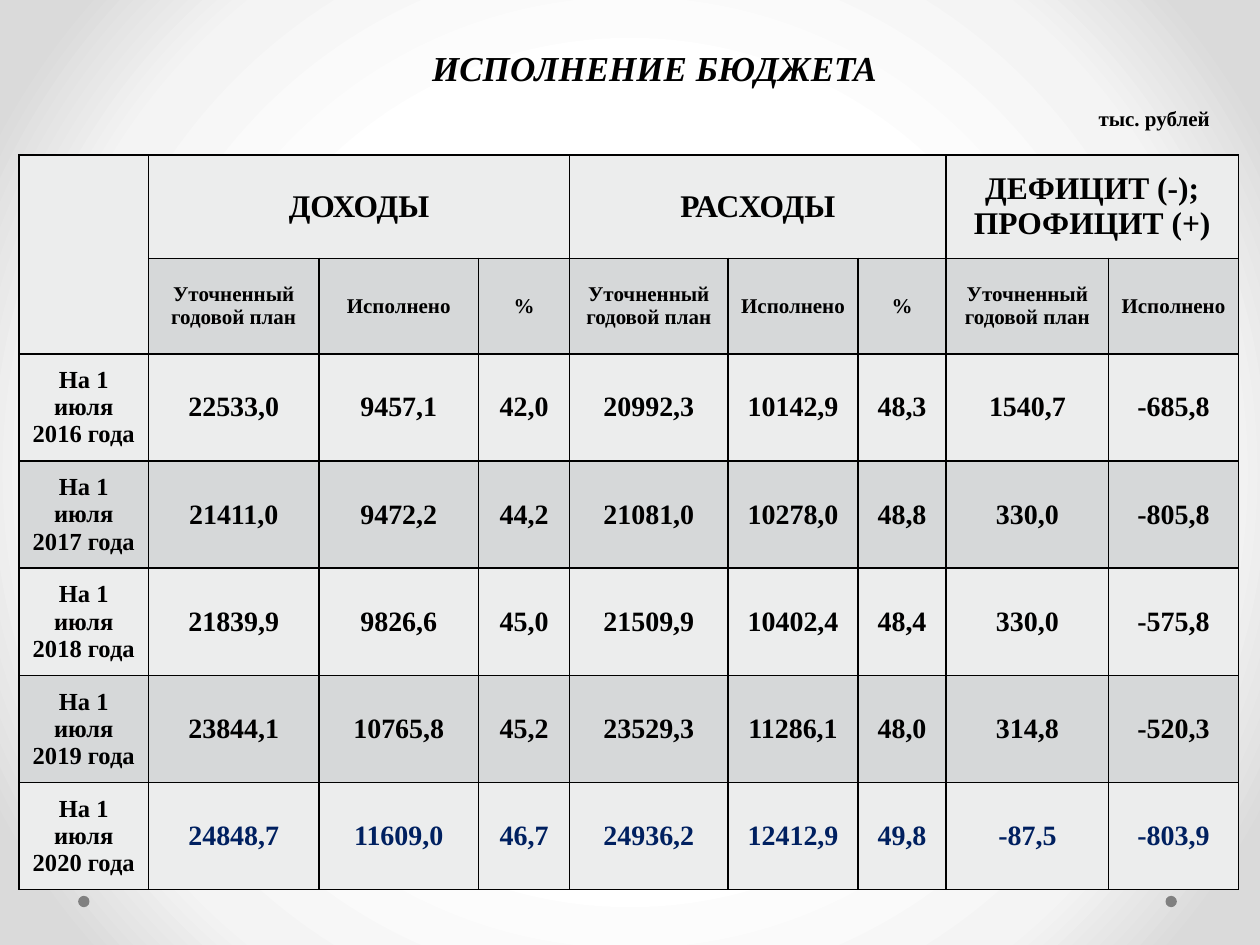
from pptx import Presentation
from pptx.dml.color import RGBColor
from pptx.enum.shapes import MSO_SHAPE
from pptx.enum.text import MSO_ANCHOR, MSO_AUTO_SIZE, PP_ALIGN
from pptx.oxml import parse_xml
from pptx.oxml.ns import nsdecls, qn
from pptx.util import Inches, Pt

TITLE = "ИСПОЛНЕНИЕ БЮДЖЕТА"
UNIT = "тыс. рублей"
GROUPS = [(1, 3, "ДОХОДЫ"), (4, 3, "РАСХОДЫ"), (7, 2, "ДЕФИЦИТ (-);\nПРОФИЦИТ (+)")]
MEASURES = ["Уточненный годовой план", "Исполнено", "%"]
RESULTS = {
    2016: ["22533,0", "9457,1", "42,0", "20992,3", "10142,9", "48,3", "1540,7", "-685,8"],
    2017: ["21411,0", "9472,2", "44,2", "21081,0", "10278,0", "48,8", "330,0", "-805,8"],
    2018: ["21839,9", "9826,6", "45,0", "21509,9", "10402,4", "48,4", "330,0", "-575,8"],
    2019: ["23844,1", "10765,8", "45,2", "23529,3", "11286,1", "48,0", "314,8", "-520,3"],
    2020: ["24848,7", "11609,0", "46,7", "24936,2", "12412,9", "49,8", "-87,5", "-803,9"],
}
COLUMN_WIDTHS = [1.03, 1.35, 1.27, 0.72, 1.26, 1.03, 0.7, 1.29, 1.03]
ROW_HEIGHTS = [0.82, 0.76] + [0.85] * len(RESULTS)
BAND_FILLS = ["ECEDED", "D6D8D9"]
BACKGROUND_STOPS = [(50, "FFFFFF"), (76, "F4F4F4"), (92, "DADADA")]
DOT_LEFTS = [9.25, 0.62]
BLACK, NAVY, GRAY = "000000", "002060", "808080"


def color(code):
    return RGBColor.from_string(code)


def write(frame, text, size=16, ink=BLACK, italic=False, align=PP_ALIGN.CENTER):
    frame.text = text
    for paragraph in frame.paragraphs:
        paragraph.alignment = align
        font = paragraph.runs[0].font
        font.name, font.size = "Times New Roman", Pt(size)
        font.bold, font.italic = True, italic
        font.color.rgb = color(ink)


def write_label(label, text, box, **style):
    label.left, label.top, label.width, label.height = map(Inches, box)
    frame = label.text_frame
    frame.word_wrap = True
    frame.auto_size = MSO_AUTO_SIZE.SHAPE_TO_FIT_TEXT
    frame.vertical_anchor = MSO_ANCHOR.TOP
    write(frame, text, **style)


def paint_background(slide):
    slide.background.fill.gradient()
    gradient = slide.element.find(".//" + qn("a:gradFill"))
    stops = "".join(
        f'<a:gs pos="{position * 1000}"><a:srgbClr val="{code}"/></a:gs>'
        for position, code in BACKGROUND_STOPS
    )
    gradient.getparent().replace(gradient, parse_xml(
        f'<a:gradFill {nsdecls("a")} rotWithShape="1"><a:gsLst>{stops}</a:gsLst>'
        '<a:path path="circle"><a:fillToRect l="50000" t="50000" r="50000" b="50000"/>'
        "</a:path></a:gradFill>"
    ))


def add_dot(slide, left):
    dot = slide.shapes.add_shape(
        MSO_SHAPE.OVAL, Inches(left), Inches(7.11), Inches(0.09), Inches(0.09))
    dot.shadow.inherit = False
    dot.fill.solid()
    dot.fill.fore_color.rgb = color(GRAY)
    dot.line.fill.background()


def style_cell(cell, fill):
    cell.vertical_anchor = MSO_ANCHOR.MIDDLE
    cell.margin_left = cell.margin_right = Inches(0.08)
    cell.fill.solid()
    cell.fill.fore_color.rgb = color(fill)
    properties = cell.fill._xPr
    for index, side in enumerate("LRTB"):
        properties.insert(index, parse_xml(
            f'<a:ln{side} {nsdecls("a")} w="12700"><a:solidFill>'
            f'<a:srgbClr val="{BLACK}"/></a:solidFill></a:ln{side}>'))


def add_budget(slide):
    budget = slide.shapes.add_table(
        len(ROW_HEIGHTS), len(COLUMN_WIDTHS), Inches(0.15), Inches(1.23),
        Inches(sum(COLUMN_WIDTHS)), Inches(sum(ROW_HEIGHTS))).table
    for column, width in zip(budget.columns, COLUMN_WIDTHS):
        column.width = Inches(width)
    for index, (row, height) in enumerate(zip(budget.rows, ROW_HEIGHTS)):
        row.height = Inches(height)
        for cell in row.cells:
            style_cell(cell, BAND_FILLS[index % 2])
    budget.cell(0, 0).merge(budget.cell(1, 0))
    for start, span, heading in GROUPS:
        budget.cell(0, start).merge(budget.cell(0, start + span - 1))
        write(budget.cell(0, start).text_frame, heading, size=18)
        for offset, measure in enumerate(MEASURES[:span]):
            write(budget.cell(1, start + offset).text_frame, measure, size=12)
    for index, (year, amounts) in enumerate(RESULTS.items(), 2):
        write(budget.cell(index, 0).text_frame, f"На 1 июля {year} года", size=14)
        ink = NAVY if year == max(RESULTS) else BLACK
        for position, amount in enumerate(amounts, 1):
            write(budget.cell(index, position).text_frame, amount, ink=ink)


def main():
    """Build the budget execution slide."""
    deck = Presentation()
    deck.slide_width, deck.slide_height = Inches(10), Inches(7.5)
    slide = deck.slides.add_slide(deck.slide_layouts[5])
    paint_background(slide)
    for left in DOT_LEFTS:
        add_dot(slide, left)
    add_budget(slide)
    write_label(slide.shapes.title, TITLE, (3.11, 0.32, 4.17, 0.44), size=20, italic=True)
    unit = slide.shapes.add_textbox(0, 0, 0, 0)
    write_label(unit, UNIT, (8.62, 0.79, 1.18, 0.3), size=12, align=PP_ALIGN.LEFT)
    deck.save("out.pptx")


if __name__ == "__main__":
    main()
